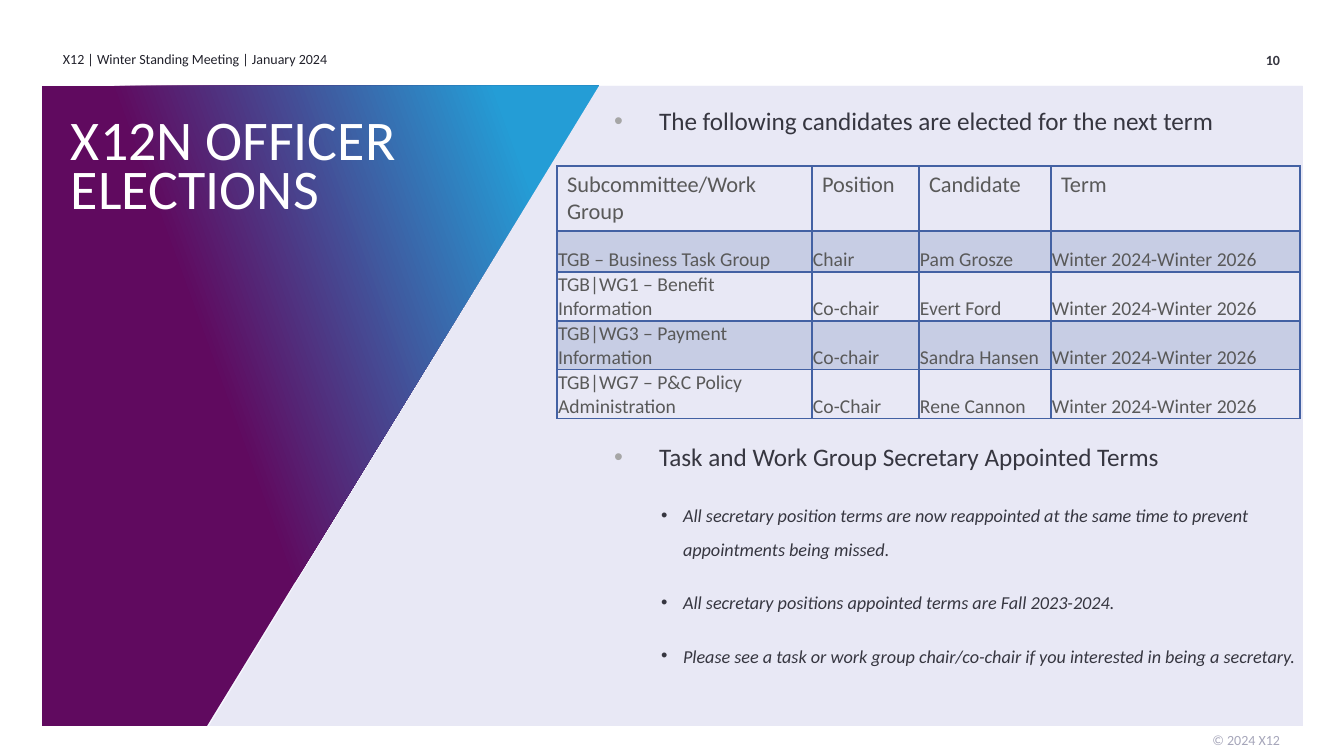
from pptx import Presentation
from pptx.dml.color import RGBColor
from pptx.enum.shapes import MSO_SHAPE
from pptx.enum.text import MSO_ANCHOR, MSO_AUTO_SIZE, PP_ALIGN
from pptx.oxml.ns import qn
from pptx.util import Pt
from lxml import etree

RECTANGLE = MSO_SHAPE.RECTANGLE
TOP, BOTTOM = MSO_ANCHOR.TOP, MSO_ANCHOR.BOTTOM
LEFT, RIGHT = PP_ALIGN.LEFT, PP_ALIGN.RIGHT
NO_AUTOFIT = MSO_AUTO_SIZE.NONE

FONT = "Calibri"
WHITE = RGBColor(0xFF, 0xFF, 0xFF)
PALE = RGBColor(0xF7, 0xF7, 0xFF)
LAVENDER = RGBColor(0xE8, 0xE8, 0xF5)
PURPLE = RGBColor(0x60, 0x0A, 0x5F)
SKY = RGBColor(0x24, 0x9D, 0xD6)
BLUE = RGBColor(0x43, 0x61, 0xA3)
INK = RGBColor(0x21, 0x21, 0x2B)
SLATE = RGBColor(0x36, 0x36, 0x40)
GRAY = RGBColor(0x59, 0x59, 0x59)
BULLET_GRAY = RGBColor(0xA6, 0xA6, 0xA6)
FOOTER_GRAY = RGBColor(0xA6, 0xA6, 0xBA)

TITLE = "X12N OFFICER ELECTIONS"
HEADINGS = [
    "The following candidates are elected for the next term",
    "Task and Work Group Secretary Appointed Terms",
]
SECRETARY_NOTES = [
    "All secretary position terms are now reappointed at the same time to prevent appointments being missed.",
    "All secretary positions appointed terms are Fall 2023-2024.",
    "Please see a task or work group chair/co-chair if you interested in being a secretary.",
]
TERM = "Winter 2024-Winter 2026"
OFFICERS = [
    ("Subcommittee/Work Group", "Position", "Candidate", "Term"),
    ("TGB – Business Task Group", "Chair", "Pam Grosze", TERM),
    ("TGB|WG1 – Benefit Information", "Co-chair", "Evert Ford", TERM),
    ("TGB|WG3 – Payment Information", "Co-chair", "Sandra Hansen", TERM),
    ("TGB|WG7 – P&C Policy Administration", "Co-Chair", "Rene Cannon", TERM),
]
COLUMN_WIDTHS = [255, 107, 132, 249]
ROW_HEIGHTS = [65, 41, 49, 49, 49]
TABLE_LEFT, TABLE_TOP = 557, 166

# text, box in px, format
MARGIN_TEXTS = [
    ("X12 | Winter Standing Meeting | January 2024", (63, 51, 454, 25), dict(color=INK)),
    ("10", (1128, 52, 152, 25), dict(color=SLATE, bold=True, align=RIGHT)),
    ("© 2024 X12", (1128, 732, 152, 25), dict(color=FOOTER_GRAY, align=RIGHT)),
]
BACKGROUND = (42, 86, 1260, 640)
WEDGE = [(42, 86), (599, 86), (207, 726), (42, 726)]
PANEL = [(209, 726), (599, 86), (1303, 86), (1303, 726)]


def px(length):
    return round(length * 914400 / 100.8)


def place(box, bounds):
    box.left, box.top, box.width, box.height = map(px, bounds)


def prepare_frame(box):
    frame = box.text_frame
    frame.word_wrap = True
    frame.auto_size = NO_AUTOFIT
    frame.vertical_anchor = TOP
    frame.margin_left = frame.margin_right = frame.margin_top = frame.margin_bottom = 0
    return frame


def write(para, text, size=10, color=INK, bold=False, italic=False, align=LEFT,
          line=None, before=0, after=0):
    para.alignment = align
    para.space_before, para.space_after = Pt(before), Pt(after)
    if line:
        para.line_spacing = Pt(line)
    span = para.add_run()
    span.text = text
    font = span.font
    font.name, font.size, font.bold, font.italic = FONT, Pt(size), bold, italic
    font.color.rgb = color


def add_bullet(para, color, margin, hang):
    properties = para._p.get_or_add_pPr()
    properties.set("marL", str(px(margin)))
    properties.set("indent", str(-px(hang)))
    bullet_color = etree.SubElement(properties, qn("a:buClr"))
    etree.SubElement(bullet_color, qn("a:srgbClr"), val=str(color))
    etree.SubElement(properties, qn("a:buFont"), typeface="Arial")
    etree.SubElement(properties, qn("a:buChar"), char="•")


def add_outline(page, points):
    builder = page.shapes.build_freeform(*points[0], scale=px(1000) / 1000)
    builder.add_line_segments(points[1:], close=True)
    return finish(builder.convert_to_shape())


def finish(shape):
    shape.shadow.inherit = False
    shape.line.fill.background()
    return shape


def add_backdrop(page):
    base = finish(page.shapes.add_shape(RECTANGLE, *map(px, BACKGROUND)))
    base.fill.solid()
    base.fill.fore_color.rgb = PALE
    wedge = add_outline(page, WEDGE)
    wedge.fill.gradient()
    wedge.fill.gradient_angle = 20
    for stop, position, color in zip(wedge.fill.gradient_stops, (0.38, 0.87), (PURPLE, SKY)):
        stop.position = position
        stop.color.rgb = color
    panel = add_outline(page, PANEL)
    panel.fill.solid()
    panel.fill.fore_color.rgb = LAVENDER


def add_borders(cell, widths):
    properties = cell._tc.get_or_add_tcPr()
    for side, width in widths.items():
        border = etree.SubElement(properties, qn("a:ln" + side), w=str(Pt(width)))
        fill = etree.SubElement(border, qn("a:solidFill"))
        etree.SubElement(fill, qn("a:srgbClr"), val=str(BLUE))


def format_cell(cell, text, row):
    header = row == 0
    add_borders(cell, {"L": 1, "R": 1, "T": 2 if row == 1 else 1, "B": 2 if header else 1})
    if row % 2:
        cell.fill.solid()
        cell.fill.fore_color.rgb = BLUE
        tint = cell._tc.tcPr.find(qn("a:solidFill"))[0]
        etree.SubElement(tint, qn("a:alpha"), val="20000")
    else:
        cell.fill.background()
    if not header:
        cell.vertical_anchor = BOTTOM
        cell.margin_left = cell.margin_right = cell.margin_top = px(1)
        cell.margin_bottom = 0
    write(cell.text_frame.paragraphs[0], text, size=16 if header else 14, color=GRAY)


def add_officer_table(page):
    bounds = (TABLE_LEFT, TABLE_TOP, sum(COLUMN_WIDTHS), sum(ROW_HEIGHTS))
    table = page.shapes.add_table(len(OFFICERS), len(COLUMN_WIDTHS), *map(px, bounds)).table
    table.first_row = table.horz_banding = False
    for column, width in zip(table.columns, COLUMN_WIDTHS):
        column.width = px(width)
    for row, (texts, height) in enumerate(zip(OFFICERS, ROW_HEIGHTS)):
        table.rows[row].height = px(height)
        for column, text in enumerate(texts):
            format_cell(table.cell(row, column), text, row)


def fill_body(body):
    frame = prepare_frame(body)
    lines = [(HEADINGS[0], 0, 0, 6), (HEADINGS[1], 0, 204, 15)]
    lines += [(note, 1, 0, 14) for note in SECRETARY_NOTES]
    for index, (text, level, before, after) in enumerate(lines):
        para = frame.add_paragraph() if index else frame.paragraphs[0]
        para.level = level
        if level:
            add_bullet(para, SLATE, margin=69, hang=22)
            style = dict(size=13, italic=True, line=24)
        else:
            add_bullet(para, BULLET_GRAY, margin=45, hang=45)
            style = dict(size=18, line=30)
        write(para, text, color=SLATE, before=before, after=after, **style)


def main():
    deck = Presentation()
    deck.slide_width, deck.slide_height = px(1344), px(756)
    page = deck.slides.add_slide(deck.slide_layouts[1])
    title, body = page.placeholders
    add_backdrop(page)
    for text, bounds, style in MARGIN_TEXTS:
        box = page.shapes.add_textbox(*map(px, bounds))
        write(prepare_frame(box).paragraphs[0], text, **style)
    for holder, bounds in ((title, (71, 123, 372, 168)), (body, (614, 94, 686, 633))):
        place(holder, bounds)
        holder.element.getparent().append(holder.element)  # bring in front of the backdrop
    write(prepare_frame(title).paragraphs[0], TITLE, size=40, color=WHITE, line=35)
    fill_body(body)
    add_officer_table(page)
    deck.save("out.pptx")


if __name__ == "__main__":
    main()
